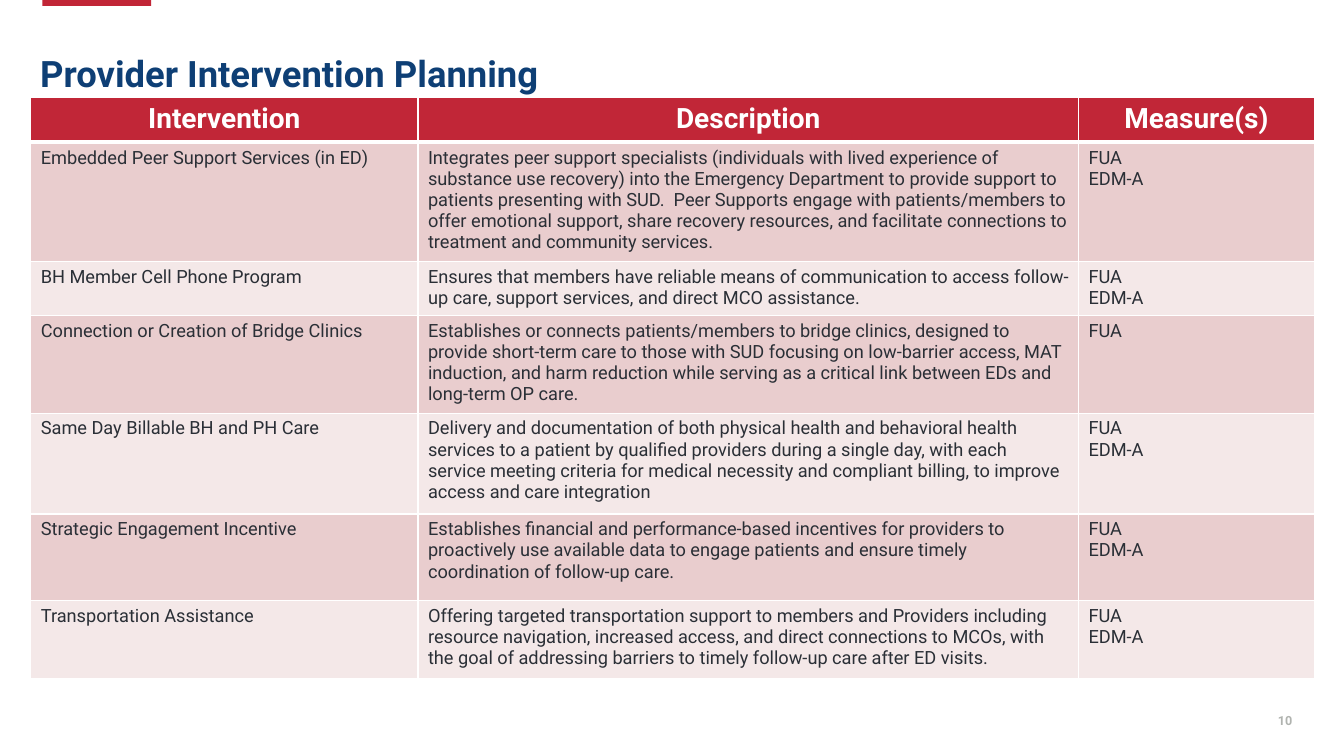
from dataclasses import dataclass

from lxml import etree
from pptx import Presentation
from pptx import util as u
from pptx.dml.color import RGBColor
from pptx.enum import shapes, text
from pptx.oxml import ns

FONT = "Roboto"
RED = RGBColor(0xC1, 0x26, 0x37)
NAVY = RGBColor(0x0E, 0x3F, 0x75)
INK = RGBColor(0x2A, 0x2F, 0x36)
GREY = RGBColor(0xB0, 0xB3, 0xAF)
WHITE = RGBColor(0xFF, 0xFF, 0xFF)
BANDS = (RGBColor(0xE9, 0xCD, 0xCE), RGBColor(0xF4, 0xE8, 0xE8))


@dataclass(frozen=True)
class TextStyle:
    size: float
    color: RGBColor
    bold: bool = False
    align: text.PP_ALIGN = text.PP_ALIGN.LEFT
    line_spacing: float = 1.0


@dataclass(frozen=True)
class Intervention:
    name: str
    description: str
    measures: tuple[str, ...]
    height: float


TITLE = TextStyle(26, NAVY, True, line_spacing=0.9)
HEADING = TextStyle(20, WHITE, True, text.PP_ALIGN.CENTER)
BODY = TextStyle(13, INK)
PAGE_NUMBER = TextStyle(9, GREY, True, text.PP_ALIGN.RIGHT)

HEADINGS = ("Intervention", "Description", "Measure(s)")
COLUMN_WIDTHS = (276.6, 471.8, 168.6)
HEADING_HEIGHT = 31.7
BOTH = ("FUA", "EDM-A")

INTERVENTIONS = (
    Intervention(
        "Embedded Peer Support Services (in ED)",
        "Integrates peer support specialists (individuals with lived experience of "
        "substance use recovery) into the Emergency Department to provide support to "
        "patients presenting with SUD.  Peer Supports engage with patients/members to "
        "offer emotional support, share recovery resources, and facilitate connections "
        "to treatment and community services.",
        BOTH, 85),
    Intervention(
        "BH Member Cell Phone Program",
        "Ensures that members have reliable means of communication to access "
        "follow-up care, support services, and direct MCO assistance.",
        BOTH, 38.4),
    Intervention(
        "Connection or Creation of Bridge Clinics",
        "Establishes or connects patients/members to bridge clinics, designed to "
        "provide short-term care to those with SUD focusing on low-barrier access, MAT "
        "induction, and harm reduction while serving as a critical link between EDs and "
        "long-term OP care.",
        ("FUA",), 69.6),
    Intervention(
        "Same Day Billable BH and PH Care",
        "Delivery and documentation of both physical health and behavioral health "
        "services to a patient by qualified providers during a single day, with each "
        "service meeting criteria for medical necessity and compliant billing, to improve "
        "access and care integration",
        BOTH, 72),
    Intervention(
        "Strategic Engagement Incentive",
        "Establishes financial and performance-based incentives for providers to "
        "proactively use available data to engage patients and ensure timely "
        "coordination of follow-up care.",
        BOTH, 62),
    Intervention(
        "Transportation Assistance",
        "Offering targeted transportation support to members and Providers including "
        "resource navigation, increased access, and direct connections to MCOs, with "
        "the goal of addressing barriers to timely follow-up care after ED visits.",
        BOTH, 56),
)


def write(frame, lines: tuple[str, ...], style: TextStyle) -> None:
    """Put each line in its own paragraph."""
    frame.word_wrap = True
    for index, line in enumerate(lines):
        paragraph = frame.paragraphs[0] if index == 0 else frame.add_paragraph()
        paragraph.alignment = style.align
        paragraph.line_spacing = style.line_spacing
        run = paragraph.add_run()
        run.text = line
        run.font.name = FONT
        run.font.size = u.Pt(style.size)
        run.font.bold = style.bold
        run.font.color.rgb = style.color


def add_label(slide, box: tuple[float, ...], label: str, style: TextStyle,
              anchor: text.MSO_ANCHOR) -> None:
    frame = slide.shapes.add_textbox(*map(u.Pt, box)).text_frame
    frame.vertical_anchor = anchor
    write(frame, (label,), style)


def set_borders(cell, top: float, bottom: float) -> None:
    """Draw white borders; the side borders are always 1 pt."""
    properties = cell._tc.get_or_add_tcPr()
    for side, width in (("L", 1), ("R", 1), ("T", top), ("B", bottom)):
        line = etree.SubElement(properties, ns.qn(f"a:ln{side}"), w=str(u.Pt(width)))
        solid = etree.SubElement(line, ns.qn("a:solidFill"))
        etree.SubElement(solid, ns.qn("a:srgbClr"), val=str(WHITE))


def fill_row(table, index: int, height: float, contents: tuple[tuple[str, ...], ...],
             style: TextStyle, fill: RGBColor) -> None:
    table.rows[index].height = u.Pt(height)
    for cell, lines in zip(table.rows[index].cells, contents):
        write(cell.text_frame, lines, style)
        set_borders(cell, top=3 if index == 1 else 1, bottom=3 if index == 0 else 1)
        cell.fill.solid()
        cell.fill.fore_color.rgb = fill


def add_interventions(slide) -> None:
    height = HEADING_HEIGHT + sum(item.height for item in INTERVENTIONS)
    table = slide.shapes.add_table(
        len(INTERVENTIONS) + 1, len(HEADINGS),
        u.Pt(22), u.Pt(69.9), u.Pt(sum(COLUMN_WIDTHS)), u.Pt(height)).table
    for column, width in zip(table.columns, COLUMN_WIDTHS):
        column.width = u.Pt(width)
    fill_row(table, 0, HEADING_HEIGHT, tuple((name,) for name in HEADINGS), HEADING, RED)
    for index, item in enumerate(INTERVENTIONS, start=1):
        contents = ((item.name,), (item.description,), item.measures)
        fill_row(table, index, item.height, contents, BODY, BANDS[(index - 1) % 2])


def main() -> None:
    deck = Presentation()
    deck.slide_width, deck.slide_height = u.Pt(960), u.Pt(540)
    slide = deck.slides.add_slide(deck.slide_layouts[6])

    # Red tab on the top edge
    tab = slide.shapes.add_shape(
        shapes.MSO_SHAPE.RECTANGLE, u.Pt(30.2), u.Pt(0), u.Pt(77.8), u.Pt(4.3))
    tab.shadow.inherit = False
    tab.fill.solid()
    tab.fill.fore_color.rgb = RED
    tab.line.fill.background()

    # Page number, table and title
    add_label(slide, (714.2, 500.4, 216, 28.8), "10", PAGE_NUMBER, text.MSO_ANCHOR.MIDDLE)
    add_interventions(slide)
    add_label(slide, (21.6, 36.7, 529.2, 40.3), "Provider Intervention Planning", TITLE,
              text.MSO_ANCHOR.TOP)

    deck.save("out.pptx")


if __name__ == "__main__":
    main()
